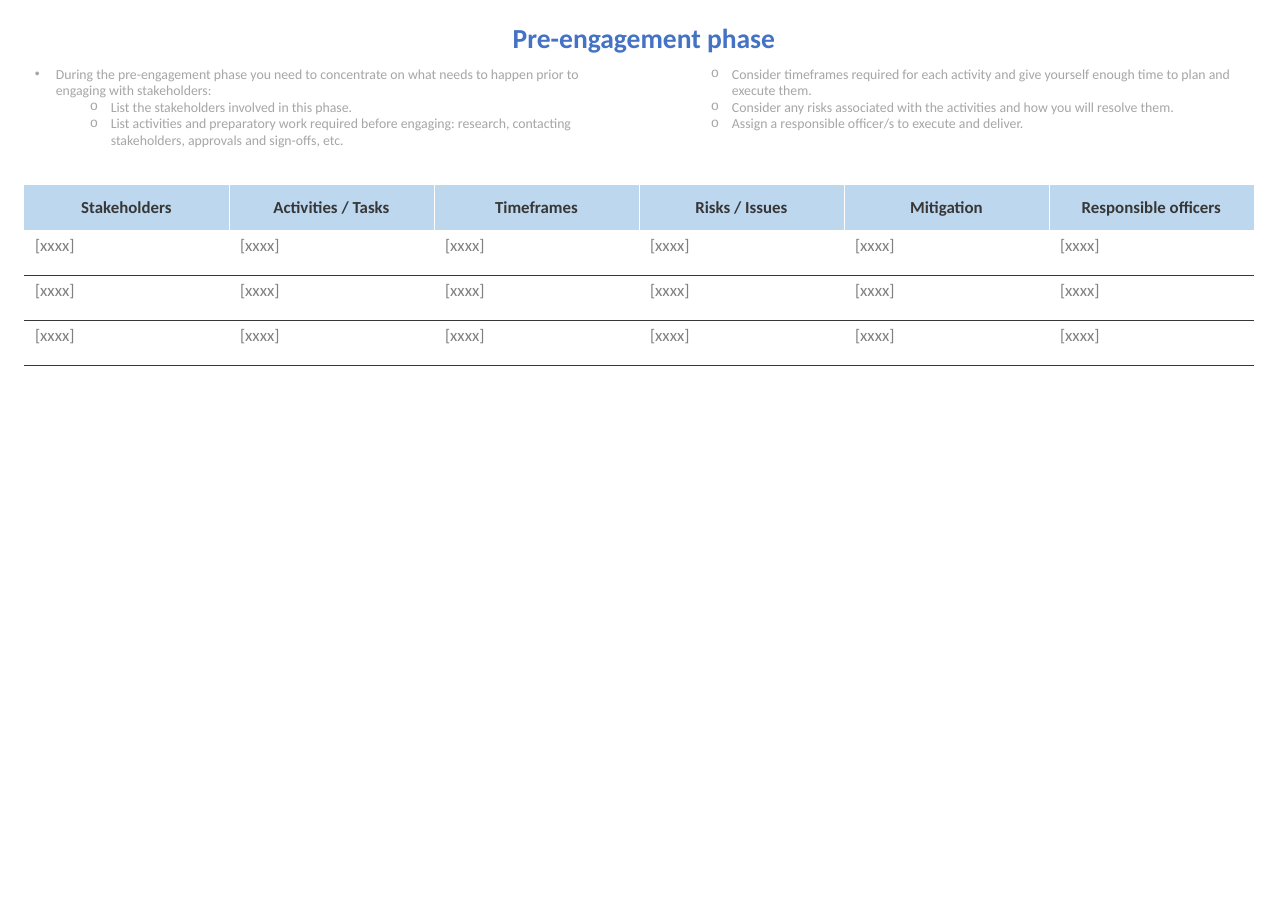
from lxml.etree import SubElement
from pptx import Presentation
from pptx.dml.color import RGBColor
from pptx.enum.text import MSO_ANCHOR, MSO_AUTO_SIZE, PP_ALIGN
from pptx.oxml.ns import qn
from pptx.util import Pt

TITLE = "Pre-engagement phase"
GUIDANCE = [
    (0, "During the pre-engagement phase you need to concentrate on what needs to happen prior to engaging with stakeholders:"),
    (1, "List the stakeholders involved in this phase."),
    (1, "List activities and preparatory work required before engaging: research, contacting stakeholders, approvals and sign-offs, etc."),
    (1, "Consider timeframes required for each activity and give yourself enough time to plan and execute them."),
    (1, "Consider any risks associated with the activities and how you will resolve them."),
    (1, "Assign a responsible officer/s to execute and deliver."),
]
HEADERS = ["Stakeholders", "Activities / Tasks", "Timeframes",
           "Risks / Issues", "Mitigation", "Responsible officers"]
ROWS = [HEADERS] + [["[xxxx]"] * len(HEADERS)] * 3
BULLETS = [("•", "Arial", 21), ("o", "Courier New", 76)]

FONT = "Calibri"
BLUE, HEADER_FILL, DARK = "4472C4", "BDD7EE", "373737"
GREY, LIGHT_GREY, WHITE = "808080", "A6A6A6", "FFFFFF"
NO_STYLE = "{2D5ABB26-0587-4C30-8999-92F81FD0307C}"

SLIDE_WIDTH, SLIDE_HEIGHT = 1288, 911
LEFT, COLUMN_WIDTH, ROW_HEIGHT = 24, 205, 45
TABLE_TOP = 185
TABLE_WIDTH = COLUMN_WIDTH * len(HEADERS)
HANGING, COLUMN_GAP = 21, 34


def px(value):
    return round(value * 914400 / 110.2)


def color(value):
    return RGBColor.from_string(value)


def style(paragraph, size, hex_color, bold=False):
    paragraph.font.name = FONT
    paragraph.font.size = Pt(size)
    paragraph.font.bold = bold
    paragraph.font.color.rgb = color(hex_color)


def add_text_box(slide, left, top, width, height):
    box = slide.shapes.add_textbox(px(left), px(top), px(width), px(height))
    box.text_frame.word_wrap = True
    return box.text_frame


def add_bullet(paragraph, level):
    character, typeface, indent = BULLETS[level]
    paragraph.level = level
    properties = paragraph._p.get_or_add_pPr()
    properties.set("marL", str(px(indent)))
    properties.set("indent", str(-px(HANGING)))
    properties.insert(0, properties.makeelement(qn("a:buFont"), {"typeface": typeface}))
    properties.insert(1, properties.makeelement(qn("a:buChar"), {"char": character}))


def add_border(cell, side, hex_color):
    line = SubElement(cell._tc.get_or_add_tcPr(), qn("a:ln" + side), w=str(Pt(0.5)))
    fill = SubElement(line, qn("a:solidFill"))
    SubElement(fill, qn("a:srgbClr"), val=hex_color)


def add_title(slide):
    frame = add_text_box(slide, 0, 13, SLIDE_WIDTH, 47)
    frame.auto_size = MSO_AUTO_SIZE.SHAPE_TO_FIT_TEXT
    paragraph = frame.paragraphs[0]
    paragraph.text = TITLE
    paragraph.alignment = PP_ALIGN.CENTER
    paragraph.line_spacing = 1.07
    paragraph.space_after = Pt(8)
    style(paragraph, 18, BLUE, True)


def add_guidance(slide):
    frame = add_text_box(slide, LEFT, 60, TABLE_WIDTH, 95)
    frame._txBody.bodyPr.set("numCol", "2")
    frame._txBody.bodyPr.set("spcCol", str(px(COLUMN_GAP)))
    for index, (level, text) in enumerate(GUIDANCE):
        paragraph = frame.add_paragraph() if index else frame.paragraphs[0]
        paragraph.text = text
        style(paragraph, 9, LIGHT_GREY)
        add_bullet(paragraph, level)


def add_plan_table(slide):
    shape = slide.shapes.add_table(len(ROWS), len(HEADERS), px(LEFT), px(TABLE_TOP),
                                   px(TABLE_WIDTH), px(ROW_HEIGHT * len(ROWS)))
    table = shape.table
    table.horz_banding = False
    table._tbl.tblPr.find(qn("a:tableStyleId")).text = NO_STYLE
    for column in table.columns:
        column.width = px(COLUMN_WIDTH)
    for row_index, texts in enumerate(ROWS):
        table.rows[row_index].height = px(ROW_HEIGHT)
        for column_index, text in enumerate(texts):
            cell = table.cell(row_index, column_index)
            cell.text = text
            paragraph = cell.text_frame.paragraphs[0]
            if row_index == 0:
                if column_index > 0:
                    add_border(cell, "L", WHITE)
                if column_index < len(HEADERS) - 1:
                    add_border(cell, "R", WHITE)
                cell.fill.solid()
                cell.fill.fore_color.rgb = color(HEADER_FILL)
                cell.vertical_anchor = MSO_ANCHOR.MIDDLE
                paragraph.alignment = PP_ALIGN.CENTER
                style(paragraph, 11, DARK, True)
            else:
                if row_index > 1:
                    add_border(cell, "T", DARK)
                add_border(cell, "B", DARK)
                cell.fill.background()
                style(paragraph, 11, GREY)


def main():
    presentation = Presentation()
    presentation.slide_width = px(SLIDE_WIDTH)
    presentation.slide_height = px(SLIDE_HEIGHT)
    slide = presentation.slides.add_slide(presentation.slide_layouts[6])
    add_guidance(slide)
    add_title(slide)
    add_plan_table(slide)
    presentation.save("out.pptx")


if __name__ == "__main__":
    main()
